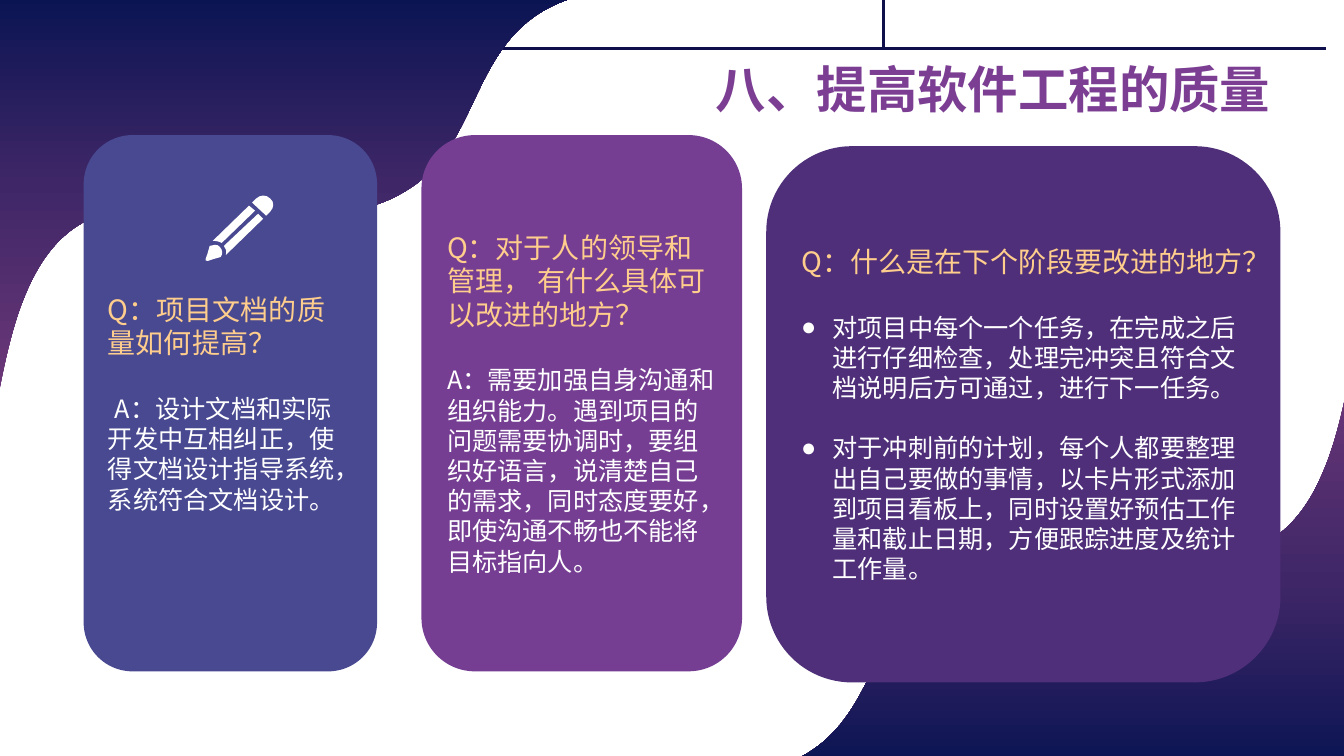
"""Build the slide on raising software engineering quality."""
import copy

from lxml import etree
from pptx import Presentation
from pptx import util as u
from pptx.dml.color import RGBColor
from pptx.enum import shapes, text
from pptx.oxml.ns import qn

THEME = {
    "font": "Noto Sans CJK SC", "bullet_font": "Arial",
    "title": "7B3E93", "question": "FFCD8C", "answer": "FFFFFF", "rule": "0F0F4B",
    "wave": [(0, "72397B"), (0.56, "3F2767"), (1, "0B1453")],
    "title_size": 36, "question_size": 20, "answer_size": 18, "leading": 1.2,
}
COLUMNS, ROWS = 13.33, 7.5
CELL = u.Inches(1)
INSET = int(0.1 * CELL)


def add_outline(container, start, steps):
    """Draw a closed outline; two numbers make a line, six make a Bézier curve."""
    points = [(round(x * CELL), round(y * CELL))
              for step in [start, *steps] for x, y in zip(step[::2], step[1::2])]
    builder = container.build_freeform(*points[0])
    builder.add_line_segments(points[1:], close=True)
    shape = builder.convert_to_shape()
    segments = iter(shape._element.findall(".//" + qn("a:lnTo")))
    for step in steps:
        segment = next(segments)
        if len(step) == 6:
            segment.addprevious(curve := etree.Element(qn("a:cubicBezTo")))
            for corner in (segment, next(segments), next(segments)):
                curve.append(corner[0])
                corner.getparent().remove(corner)
    shape.shadow.inherit = False
    shape.line.fill.background()
    return shape


def add_text(paragraph, words, role, bold=False):
    """Add one styled run and set the paragraph's leading."""
    size = THEME[role + "_size"]
    paragraph.line_spacing = u.Pt(size * THEME["leading"])
    run = paragraph.add_run()
    run.text = words
    run.font.name = THEME["font"]
    run.font.size = u.Pt(size)
    run.font.bold = bold
    run.font.color.rgb = RGBColor.from_string(THEME[role])
    etree.SubElement(run.font._element, qn("a:ea"), typeface=THEME["font"])


presentation = Presentation()
presentation.slide_width = int(COLUMNS * CELL)
presentation.slide_height = int(ROWS * CELL)
slide = presentation.slides.add_slide(presentation.slide_layouts[5])

for ends in [(8.76, 0, 8.76, 0.48), (4.36, 0.48, 13.15, 0.48)]:
    rule = slide.shapes.add_connector(
        shapes.MSO_CONNECTOR.STRAIGHT, *[int(end * CELL) for end in ends])
    rule.line.color.rgb = RGBColor.from_string(THEME["rule"])
    rule.line.width = u.Pt(2.25)
    etree.SubElement(rule._element.spPr, qn("a:effectLst"))

wave_steps = [
    (13.37, 3.83, 13.28, 4.3, 13.14, 4.64), (12.84, 5.39, 12.38, 5.55, 11.74, 5.55),
    (11.6, 5.55, 11.45, 5.54, 11.3, 5.53), (10.92, 5.51, 10.6, 5.47, 10.3, 5.47),
    (9.91, 5.47, 9.58, 5.53, 9.26, 5.76), (8.58, 6.26, 8.7, 7.3, 7.7, 7.61),
    (7.65, 7.62), (13.44, 7.62),
]
for left, top, rotation in [(7.65, 3.41, 0), (-0.06, -0.03, 180)]:
    wave = add_outline(slide.shapes, (13.44, 3.41), wave_steps)
    wave.left, wave.top, wave.rotation = int(left * CELL), int(top * CELL), rotation
    wave.fill.gradient()
    wave.fill.gradient_angle = 270
    stop_list = wave._element.spPr.find(".//" + qn("a:gsLst"))
    stop_list.append(copy.deepcopy(stop_list[0]))
    for stop, (position, color) in zip(wave.fill.gradient_stops, THEME["wave"]):
        stop.position = position
        stop.color.rgb = RGBColor.from_string(color)

title = slide.shapes.title
slide.shapes._spTree.append(title._element)
title.left, title.top, title.width, title.height = [
    int(length * CELL) for length in (4.81, 0.48, 7.89, 0.71)]
frame = title.text_frame
frame.auto_size = text.MSO_AUTO_SIZE.NONE
frame.word_wrap = True
frame.vertical_anchor = text.MSO_ANCHOR.TOP
frame.margin_left = frame.margin_right = frame.margin_top = frame.margin_bottom = INSET
frame.paragraphs[0].alignment = text.PP_ALIGN.RIGHT
add_text(frame.paragraphs[0], "八、提高软件工程的质量", "title", bold=True)

BULLET_INDENT, FIRST_LINE_INDENT = 0.31, 0.07
cards = [
    (4.18, 1.34, 3.18, "753E93", "Q：对于人的领导和管理， 有什么具体可以改进的地方？", 0,
     ["A：需要加强自身沟通和组织能力。遇到项目的问题需要协调时，要组织好语言，"
      "说清楚自己的需求，同时态度要好，即使沟通不畅也不能将目标指向人。"]),
    (7.6, 1.45, 5.1, "4F2F79", "Q：什么是在下个阶段要改进的地方？", -BULLET_INDENT,
     ["对项目中每个一个任务，在完成之后进行仔细检查，处理完冲突且符合文档说明后方可通过，"
      "进行下一任务。",
      "对于冲刺前的计划，每个人都要整理出自己要做的事情，以卡片形式添加到项目看板上，"
      "同时设置好预估工作量和截止日期，方便跟踪进度及统计工作量。"]),
    (0.83, 1.34, 2.91, "484991", "Q：项目文档的质量如何提高？", FIRST_LINE_INDENT,
     ["A：设计文档和实际开发中互相纠正，使得文档设计指导系统，系统符合文档设计。"]),
]
for left, top, width, color, question, indent, answers in cards:
    card = slide.shapes.add_shape(
        shapes.MSO_SHAPE.ROUNDED_RECTANGLE,
        *[int(length * CELL) for length in (left, top, width, 5.32)])
    card.shadow.inherit = False
    card.fill.solid()
    card.fill.fore_color.rgb = RGBColor.from_string(color)
    card.line.fill.background()
    frame = card.text_frame
    frame.word_wrap = True
    frame.vertical_anchor = text.MSO_ANCHOR.MIDDLE
    frame.margin_left = frame.margin_right = frame.margin_top = frame.margin_bottom = INSET
    paragraph = frame.paragraphs[0]
    paragraph.alignment = text.PP_ALIGN.LEFT
    paragraph.space_after = u.Pt(THEME["question_size"] * THEME["leading"])
    add_text(paragraph, question, "question")
    for number, answer in enumerate(answers, 1):
        paragraph = frame.add_paragraph()
        paragraph.alignment = text.PP_ALIGN.LEFT
        add_text(paragraph, answer, "answer")
        if number < len(answers):
            paragraph.space_after = u.Pt(THEME["answer_size"] * THEME["leading"])
        properties = paragraph._p.get_or_add_pPr()
        properties.set("indent", str(int(indent * CELL)))
        if indent < 0:
            properties.set("marL", str(int(-indent * CELL)))
            etree.SubElement(properties, qn("a:buFont"), typeface=THEME["bullet_font"])
            etree.SubElement(properties, qn("a:buChar"), char="●")

pencil = slide.shapes.add_group_shape()
pencil_parts = [
    ((2.47, 2.04), [(2.11, 2.39), (2.11, 2.39, 2.12, 2.39, 2.13, 2.39),
                    (2.15, 2.39, 2.18, 2.4, 2.2, 2.41), (2.53, 2.09)]),
    ((2.61, 1.94), [(2.59, 1.94, 2.56, 1.95, 2.54, 1.97), (2.5, 2.01), (2.64, 2.14),
                    (2.68, 2.1), (2.72, 2.06, 2.72, 2, 2.68, 1.97),
                    (2.66, 1.95, 2.64, 1.94, 2.61, 1.94)]),
    ((2.56, 2.12), [(2.22, 2.44), (2.24, 2.46, 2.25, 2.49, 2.24, 2.53), (2.61, 2.17)]),
    ((2.13, 2.43), [(2.11, 2.43, 2.1, 2.43, 2.08, 2.44), (2.06, 2.51), (2.04, 2.57),
                    (2.03, 2.58, 2.04, 2.59, 2.06, 2.59), (2.12, 2.57), (2.19, 2.55),
                    (2.21, 2.52, 2.21, 2.48, 2.18, 2.45),
                    (2.17, 2.43, 2.15, 2.43, 2.13, 2.43)]),
]
for start, steps in pencil_parts:
    part = add_outline(pencil.shapes, start, steps)
    part.fill.solid()
    part.fill.fore_color.rgb = RGBColor.from_string(THEME["answer"])

presentation.save("out.pptx")
